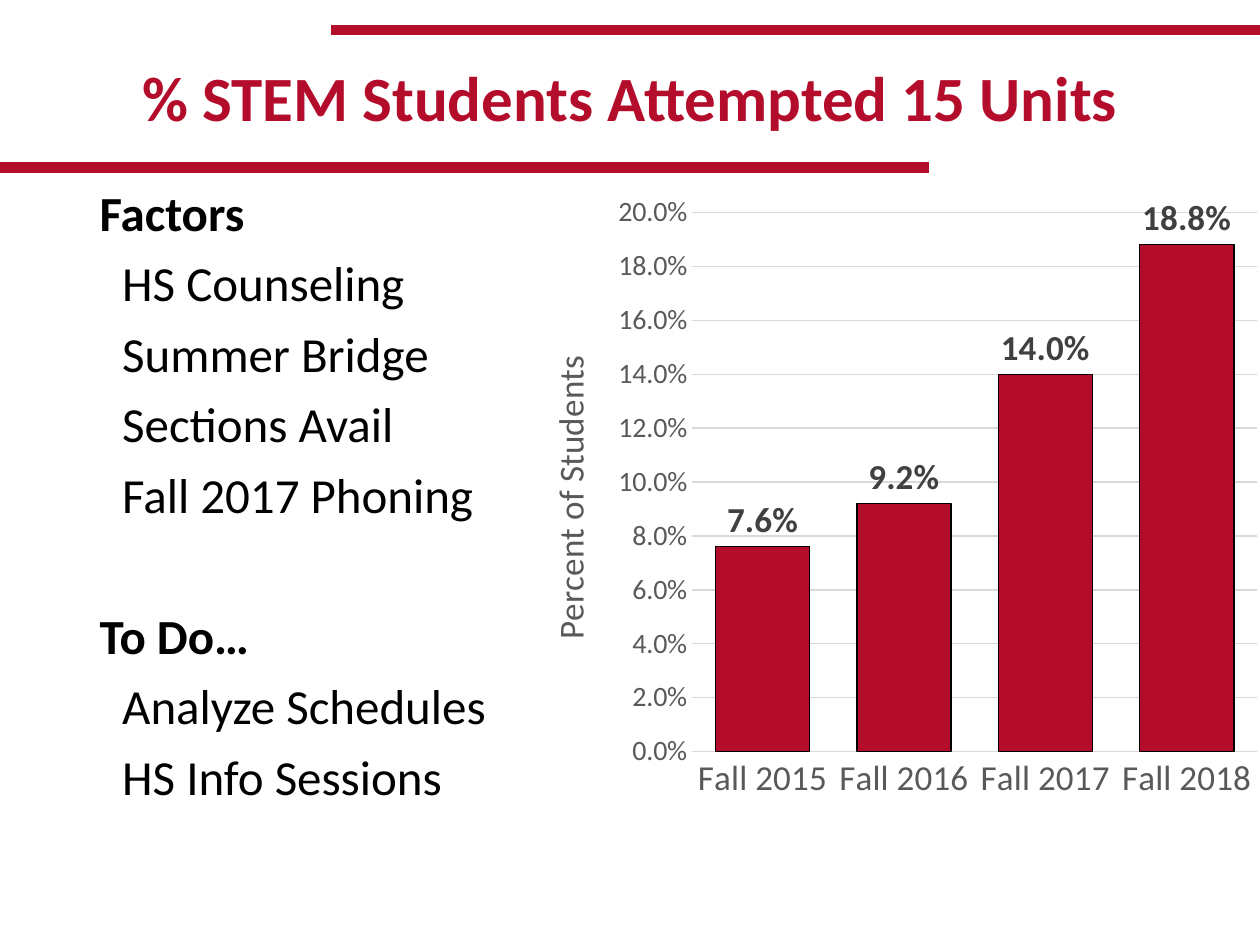
from lxml import etree
from pptx import Presentation
from pptx.chart.data import CategoryChartData
from pptx.dml.color import RGBColor
from pptx.enum.chart import XL_CHART_TYPE, XL_LABEL_POSITION, XL_TICK_MARK
from pptx.enum.shapes import MSO_CONNECTOR
from pptx.enum.text import MSO_ANCHOR, MSO_AUTO_SIZE, PP_ALIGN
from pptx.oxml.ns import qn
from pptx.util import Inches, Pt

COLUMNS = XL_CHART_TYPE.COLUMN_CLUSTERED
OUTSIDE = XL_LABEL_POSITION.OUTSIDE_END
NO_TICK = XL_TICK_MARK.NONE
STRAIGHT = MSO_CONNECTOR.STRAIGHT
TOP, MIDDLE = MSO_ANCHOR.TOP, MSO_ANCHOR.MIDDLE
LEFT, CENTER = PP_ALIGN.LEFT, PP_ALIGN.CENTER

COLORS = {
    "accent": "B40D2B",
    "text": "000000",
    "axis": "595959",
    "grid": "D9D9D9",
    "label": "404040",
}
FONT = "Calibri"
TITLE = "% STEM Students Attempted 15 Units"
SECTIONS = {
    "Factors": ["HS Counseling", "Summer Bridge", "Sections Avail", "Fall 2017 Phoning"],
    "To Do…": ["Analyze Schedules", "HS Info Sessions"],
}
ATTEMPTED_15 = {"Fall 2015": 0.076, "Fall 2016": 0.092, "Fall 2017": 0.14, "Fall 2018": 0.188}


def rgb(name):
    return RGBColor.from_string(COLORS[name])


def style_font(font, size, color, bold=False):
    font.name, font.size, font.bold = FONT, Pt(size), bold
    font.color.rgb = rgb(color)


def style_line(line, color, width=0.75):
    line.color.rgb = rgb(color)
    line.width = Pt(width)


def write(paragraph, text, size=28, color="text", bold=False, align=LEFT, before=0, indent=0):
    """Fill a paragraph with one formatted, unbulleted run."""
    run = paragraph.add_run()
    run.text = text
    style_font(run.font, size, color, bold)
    paragraph.alignment = align
    paragraph.line_spacing = 0.9
    paragraph.space_before = Pt(before)
    properties = paragraph._p.get_or_add_pPr()
    properties.set("marL", str(Inches(indent)))
    properties.set("indent", "0")
    etree.SubElement(properties, qn("a:buNone"))


class SlideBuilder:
    def __init__(self, slide):
        self.slide = slide

    def rule(self, start, end, y):
        line = self.slide.shapes.add_connector(
            STRAIGHT, Inches(start), Inches(y), Inches(end), Inches(y))
        style_line(line.line, "accent", 6)
        etree.SubElement(line._element.spPr, qn("a:effectLst"))

    def place(self, holder, top, height, anchor):
        """Position a placeholder in the content column and return its text frame."""
        holder.left, holder.top = Inches(0.69), Inches(top)
        holder.width, holder.height = Inches(8.62), Inches(height)
        frame = holder.text_frame
        frame.auto_size = MSO_AUTO_SIZE.NONE
        frame.vertical_anchor = anchor
        return frame

    def title(self, text):
        frame = self.place(self.slide.shapes.title, 0.4, 0.81, MIDDLE)
        write(frame.paragraphs[0], text, size=36, color="accent", bold=True, align=CENTER)

    def sections(self, sections):
        frame = self.place(self.slide.placeholders[1], 1.45, 5.3, TOP)
        for number, (heading, items) in enumerate(sections.items()):
            paragraph = frame.add_paragraph() if number else frame.paragraphs[0]
            write(paragraph, heading, bold=True, before=50.5 if number else 10)
            for item in items:
                write(frame.add_paragraph(), item, before=10, indent=0.18)

    def column_chart(self, values, axis_title):
        data = CategoryChartData(number_format="0.0%")
        data.categories = list(values)
        data.add_series("Series 1", list(values.values()))
        chart = self.slide.shapes.add_chart(
            COLUMNS, Inches(4.1), Inches(1.45), Inches(6), Inches(5), data).chart
        chart.has_legend = chart.has_title = False
        style_font(chart.font, 10, "text")

        category_axis, value_axis = chart.category_axis, chart.value_axis
        for axis, size in ((category_axis, 20), (value_axis, 16)):
            axis.major_tick_mark = axis.minor_tick_mark = NO_TICK
            style_font(axis.tick_labels.font, size, "axis")
        style_line(category_axis.format.line, "grid")
        value_axis.format.line.fill.background()
        value_axis.minimum_scale, value_axis.maximum_scale = 0, 0.2
        value_axis.major_unit = 0.02
        style_line(value_axis.major_gridlines.format.line, "grid")
        value_axis.tick_labels.number_format = "0.0%"
        value_axis.tick_labels.number_format_is_linked = False
        run = value_axis.axis_title.text_frame.paragraphs[0].add_run()
        run.text = axis_title
        style_font(run.font, 20, "axis")

        plot = chart.plots[0]
        plot.gap_width, plot.overlap, plot.vary_by_categories = 50, -6, False
        columns = plot.series[0]
        columns.format.fill.solid()
        columns.format.fill.fore_color.rgb = rgb("accent")
        style_line(columns.format.line, "text")
        labels = columns.data_labels
        labels.show_value = True
        labels.position = OUTSIDE
        labels.number_format, labels.number_format_is_linked = "0.0%", False
        style_font(labels.font, 20, "label", bold=True)


def main():
    presentation = Presentation()
    presentation.slide_width, presentation.slide_height = Inches(10), Inches(7.5)
    builder = SlideBuilder(presentation.slides.add_slide(presentation.slide_layouts[1]))
    builder.rule(0, 7.37, 1.33)
    builder.rule(2.63, 10, 0.24)
    builder.title(TITLE)
    builder.sections(SECTIONS)
    builder.column_chart(ATTEMPTED_15, "Percent of Students")
    presentation.save("out.pptx")


if __name__ == "__main__":
    main()
